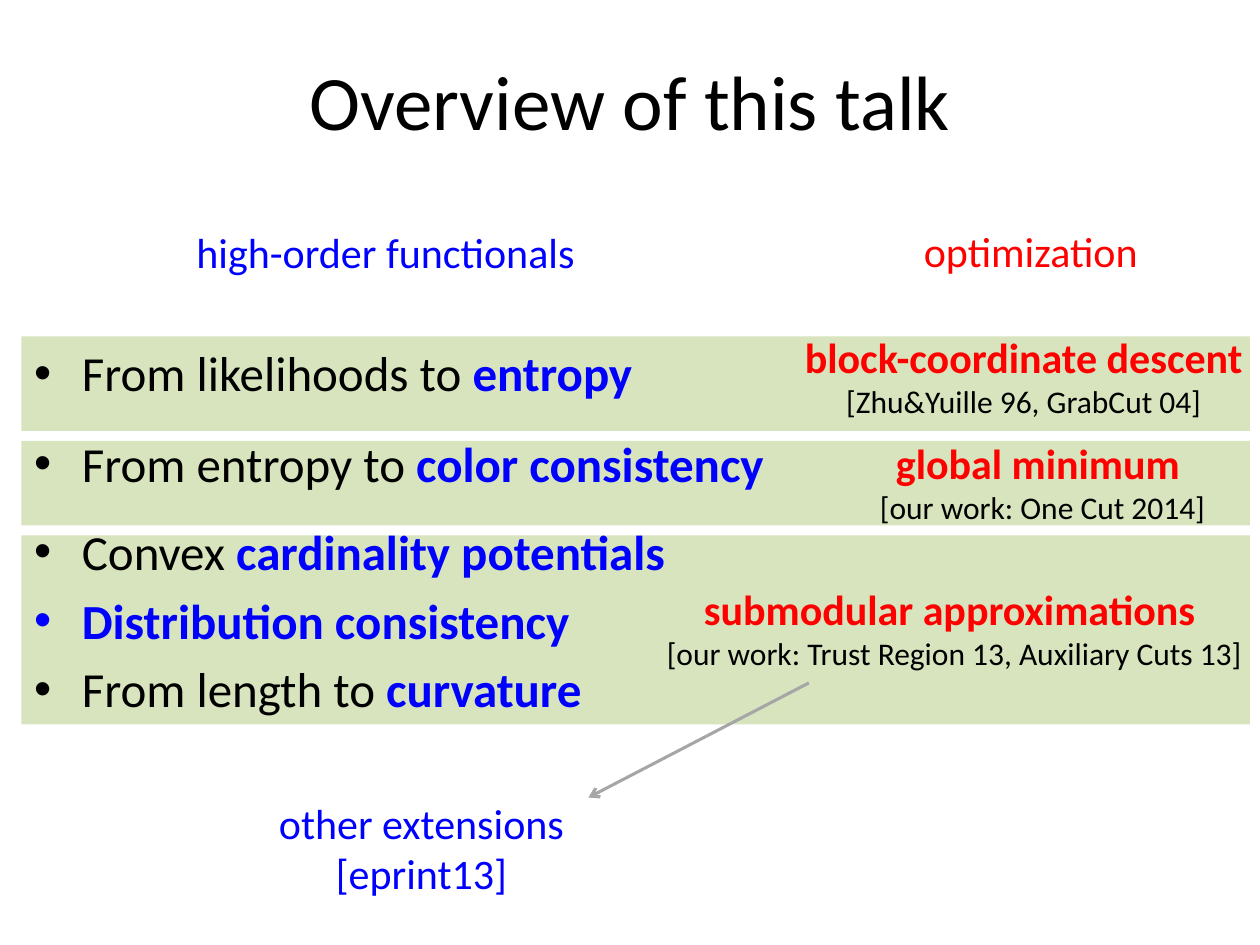
from lxml import etree
from pptx import Presentation
from pptx.dml.color import RGBColor
from pptx.enum.shapes import MSO_CONNECTOR, MSO_SHAPE
from pptx.enum.text import MSO_ANCHOR, MSO_AUTO_SIZE, PP_ALIGN
from pptx.oxml.ns import qn
from pptx.util import Inches, Pt

RECTANGLE = MSO_SHAPE.RECTANGLE
STRAIGHT = MSO_CONNECTOR.STRAIGHT
CENTER = PP_ALIGN.CENTER
LEFT = PP_ALIGN.LEFT
MIDDLE = MSO_ANCHOR.MIDDLE
NO_AUTOFIT = MSO_AUTO_SIZE.NONE
GROW = MSO_AUTO_SIZE.SHAPE_TO_FIT_TEXT

FONT = "Calibri"
BLACK, BLUE, RED = "000000", "0000FF", "FF0000"
GREEN, GRAY = "D7E4BD", "A6A6A6"

BANDS = [
    ((0.17, 4.25, 9.75, 1.5), (5.17, 4.58, 4.81, 0.81), False,
     "submodular approximations ", "[our work: Trust Region 13, Auxiliary Cuts 13]"),
    ((0.17, 3.5, 9.75, 0.67), (6.87, 3.42, 2.81, 0.81), False,
     "global minimum ", "[our work: One Cut 2014]"),
    ((0.17, 2.67, 9.75, 0.75), (6.25, 2.58, 3.75, 0.81), True,
     "block-coordinate descent", "[Zhu&Yuille 96, GrabCut 04]"),
]
TOPICS = [
    ("From likelihoods to ", "entropy", 0),
    ("From entropy to ", "color consistency", 18),
    ("Convex ", "cardinality potentials", 17),
    ("", "Distribution consistency", 5.6),
    ("From length to ", "curvature", 5.6),
]


def color(value):
    return RGBColor.from_string(value)


def inches(box):
    return [Inches(length) for length in box]


def add_run(paragraph, text, size=24, fill=BLACK, bold=False):
    run = paragraph.add_run()
    run.text = text
    run.font.name = FONT
    run.font.size = Pt(size)
    run.font.bold = bold
    run.font.color.rgb = color(fill)


def add_label(shapes, box, lines, wrap=False):
    label = shapes.add_textbox(*inches(box))
    frame = label.text_frame
    frame.word_wrap = wrap
    frame.auto_size = GROW
    for index, (text, style) in enumerate(lines):
        paragraph = frame.add_paragraph() if index else frame.paragraphs[0]
        paragraph.alignment = CENTER
        add_run(paragraph, text, **style)


def add_band(slide, box, label_box, wrap, method, reference):
    shapes = slide.shapes.add_group_shape().shapes
    band = shapes.add_shape(RECTANGLE, *inches(box))
    band.shadow.inherit = False
    band.fill.solid()
    band.fill.fore_color.rgb = color(GREEN)
    band.line.fill.background()
    lines = [(method, {"fill": RED, "bold": True}), (reference, {"size": 18})]
    add_label(shapes, label_box, lines, wrap)


def place_placeholder(slide, placeholder, box):
    placeholder.left, placeholder.top, placeholder.width, placeholder.height = inches(box)
    placeholder.text_frame.auto_size = NO_AUTOFIT
    slide.shapes.element.append(placeholder.element)
    return placeholder.text_frame


def fill_title(slide, box):
    frame = place_placeholder(slide, slide.shapes.title, box)
    frame.vertical_anchor = MIDDLE
    frame.paragraphs[0].alignment = CENTER
    add_run(frame.paragraphs[0], "Overview of this talk", size=44)


def fill_topics(slide, box):
    frame = place_placeholder(slide, slide.placeholders[1], box)
    for index, (lead, topic, space) in enumerate(TOPICS):
        paragraph = frame.add_paragraph() if index else frame.paragraphs[0]
        paragraph.alignment = LEFT
        paragraph.space_before = Pt(space)
        properties = paragraph._p.get_or_add_pPr()
        properties.set("marL", str(Inches(0.38)))
        properties.set("indent", str(-Inches(0.38)))
        etree.SubElement(properties, qn("a:buFont"), typeface="Arial")
        etree.SubElement(properties, qn("a:buChar"), char="•")
        if lead:
            add_run(paragraph, lead, size=28)
        add_run(paragraph, topic, size=28, fill=BLUE, bold=True)


def add_arrow(shapes, start, end):
    arrow = shapes.add_connector(STRAIGHT, *inches(start + end))
    arrow.line.color.rgb = color(GRAY)
    arrow.line.width = Pt(1.75)
    etree.SubElement(arrow.line._get_or_add_ln(), qn("a:tailEnd"), type="arrow")
    etree.SubElement(arrow._element.spPr, qn("a:effectLst"))


def add_extensions(slide, box):
    shapes = slide.shapes.add_group_shape().shapes
    add_arrow(shapes, (6.42, 5.42), (4.67, 6.33))
    add_label(shapes, box, [("other extensions [eprint13]", {"fill": BLUE})])


def main():
    presentation = Presentation()
    presentation.slide_width = Inches(10)
    presentation.slide_height = Inches(7.5)
    slide = presentation.slides.add_slide(presentation.slide_layouts[1])
    for band in BANDS:
        add_band(slide, *band)
    fill_title(slide, (0.5, 0.17, 9, 1.25))
    fill_topics(slide, (0.17, 2.67, 6.42, 4.42))
    add_label(slide.shapes, (7.22, 1.74, 1.92, 0.5), [("optimization", {"fill": RED})])
    add_label(slide.shapes, (1.44, 1.75, 3.24, 0.5),
              [("high-order functionals", {"fill": BLUE})])
    add_extensions(slide, (1.45, 6.28, 3.79, 0.81))
    presentation.save("out.pptx")


if __name__ == "__main__":
    main()
